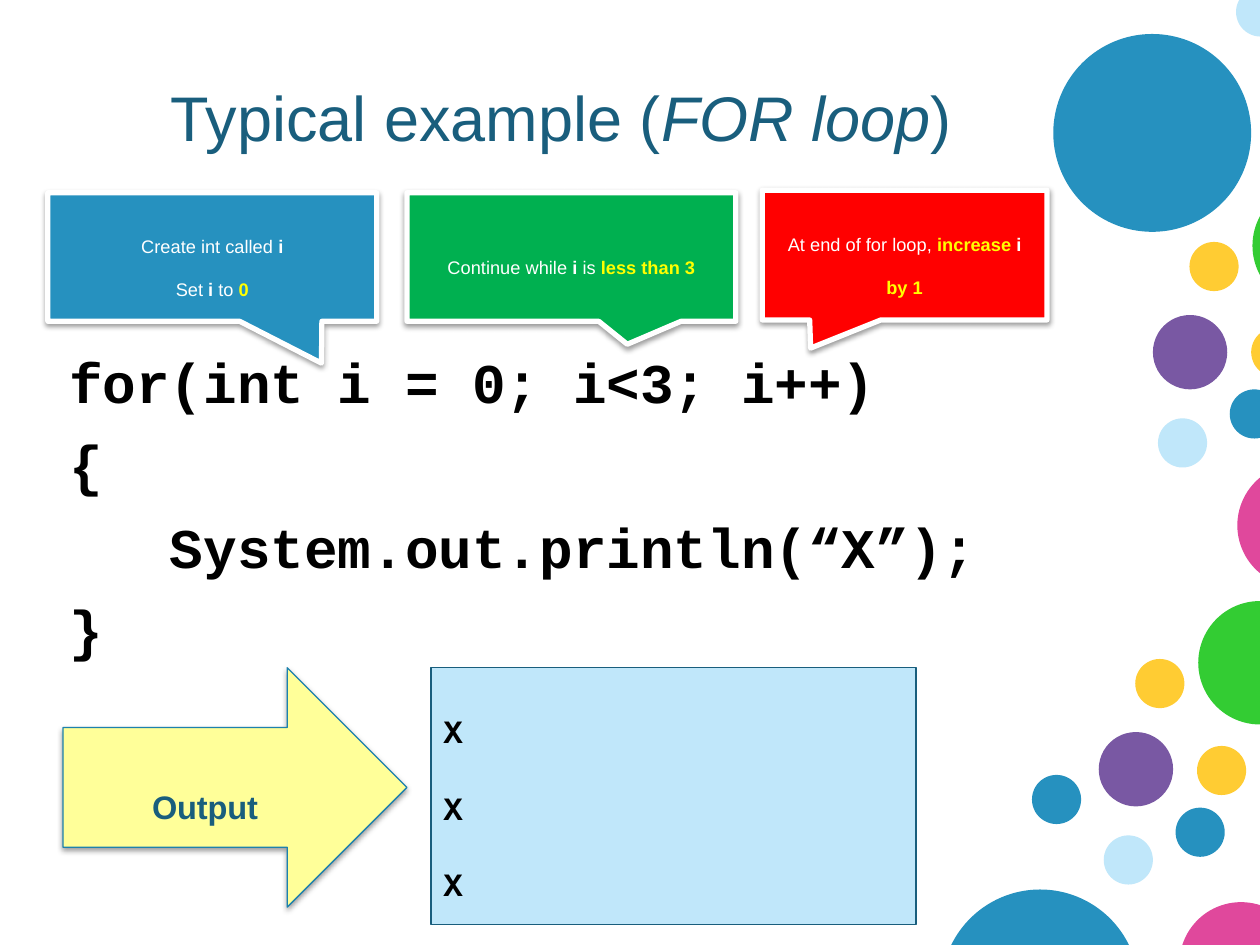
from lxml import etree
from pptx import Presentation
from pptx import util as u
from pptx.dml.color import RGBColor
from pptx.enum import shapes, text
from pptx.oxml.ns import qn

COLOURS = {
    "blue": "2691BF", "sky": "C0E7FA", "green": "33CC33", "yellow": "FFCC33",
    "pink": "E0489C", "purple": "7958A3", "navy": "195E7D", "edge": "1D81AD",
    "lemon": "FFFF99", "leaf": "00B050", "red": "FF0000", "bright": "FFFF00",
    "white": "FFFFFF", "black": "000000",
}
CIRCLES = [
    (9.51, 4.77, 0.98, "green"), (9.01, 5.23, 0.39, "yellow"),
    (9.82, 3.68, 0.98, "pink"), (8.72, 5.81, 0.59, "purple"),
    (8.19, 6.15, 0.39, "blue"), (9.5, 5.92, 0.39, "yellow"),
    (8.76, 6.63, 0.39, "sky"), (9.33, 6.41, 0.39, "blue"),
    (8.36, 0.27, 1.57, "blue"), (9.94, 1.46, 0.98, "green"),
    (9.44, 1.92, 0.39, "yellow"), (9.15, 2.5, 0.59, "purple"),
    (9.93, 2.6, 0.39, "yellow"), (9.19, 3.32, 0.39, "sky"),
    (9.76, 3.09, 0.39, "blue"), (7.47, 7.06, 1.57, "blue"),
    (9.36, 7.16, 0.98, "pink"), (9.81, -0.1, 0.39, "sky"),
]
STRONG = {"bold": True}
KEY = {"bold": True, "colour": "bright"}
CALLOUTS = [
    ((0.38, 1.53, 2.61, 1.02), (0.332, 0.826), "blue",
     [[("Create int called ", {}), ("i", STRONG)],
      [("Set ", {}), ("i ", STRONG), ("to ", {}), ("0", KEY)]]),
    ((3.23, 1.53, 2.61, 1.02), (0.17, 0.679), "leaf",
     [[("Continue while ", {}), ("i", STRONG), (" is ", {}), ("less than 3", KEY)]]),
    ((6.05, 1.51, 2.26, 1.03), (-0.33, 0.717), "red",
     [[("At end of for loop, ", {}), ("increase", KEY), (" i ", STRONG), ("by 1", KEY)]]),
]
CODE = [("for(int i = 0; i<3; i++)", 0), ("{", 0), ("System.out.println(“X”);", 0.8), ("}", 0)]


def rgb(name):
    """Return the named colour."""
    return RGBColor.from_string(COLOURS[name])


def add_span(para, words, size=18, font="Arial", colour="white", bold=False, italic=False, lowered=False):
    """Add a formatted run to a paragraph."""
    span = para.add_run()
    span.text = words
    span.font.size, span.font.name = u.Pt(size), font
    span.font.bold, span.font.italic = bold, italic
    span.font.color.rgb = rgb(colour)
    if lowered:
        span.font._element.set("baseline", "-25000")


class SlideBuilder:
    """Hold the style and the current slide."""

    def __init__(self, deck):
        """Add a title-only slide to the deck."""
        self.page = deck.slides.add_slide(deck.slide_layouts[5])

    def place(self, at):
        """Convert a box in inches to lengths."""
        return [u.Inches(value) for value in at]

    def shape(self, kind, at, fill, line=None, width=0.75, shadow=False):
        """Add a filled preset shape."""
        shape = self.page.shapes.add_shape(kind, *self.place(at))
        shape.shadow.inherit = False
        shape.fill.solid()
        shape.fill.fore_color.rgb = rgb(fill)
        if line:
            shape.line.color.rgb = rgb(line)
            shape.line.width = u.Pt(width)
        else:
            shape.line.fill.background()
        if shadow:
            effects = shape._element.spPr.find(qn("a:effectLst"))
            outer = etree.SubElement(effects, qn("a:outerShdw"), blurRad=str(u.Pt(3.1)),
                                     dist=str(u.Pt(1.6)), dir="5400000", rotWithShape="0")
            tint = etree.SubElement(outer, qn("a:srgbClr"), val=COLOURS["black"])
            etree.SubElement(tint, qn("a:alpha"), val="38000")
        return shape

    def fill_text(self, shape, lines, align=text.PP_ALIGN.CENTER, anchor=text.MSO_ANCHOR.MIDDLE,
                  before=0, **style):
        """Fill a shape with lines of formatted spans."""
        frame = shape.text_frame
        frame.word_wrap = True
        frame.vertical_anchor = anchor
        for index, spans in enumerate(lines):
            para = frame.add_paragraph() if index else frame.paragraphs[0]
            para.alignment = align
            para.space_before = u.Pt(before)
            for words, changes in spans:
                add_span(para, words, **{**style, **changes})
        return frame

    def title(self, at, spans):
        """Place and fill the title."""
        title = self.page.shapes.title
        title.left, title.top, title.width, title.height = self.place(at)
        self.fill_text(title, [spans], size=36, colour="navy")

    def code(self, at, lines):
        """Add a block of indented code."""
        box = self.page.shapes.add_textbox(*self.place(at))
        frame = self.fill_text(box, [[(words, {})] for words, _ in lines], text.PP_ALIGN.LEFT,
                               text.MSO_ANCHOR.TOP, before=8.6, size=32,
                               font="Courier New", colour="black", bold=True)
        for para, (_, indent) in zip(frame.paragraphs, lines):
            para._p.get_or_add_pPr().set("marL", str(u.Inches(indent)))

    def callout(self, at, tip, fill, lines):
        """Add a callout whose tip is given relative to its centre."""
        shape = self.shape(shapes.MSO_SHAPE.RECTANGULAR_CALLOUT, at, fill, "white", 3, True)
        shape.adjustments[0], shape.adjustments[1] = tip
        self.fill_text(shape, lines, lowered=True)


def main():
    """Build and save the slide."""
    deck = Presentation()
    deck.slide_width, deck.slide_height = u.Inches(10), u.Inches(7.5)
    builder = SlideBuilder(deck)
    for left, top, size, colour in CIRCLES:
        builder.shape(shapes.MSO_SHAPE.OVAL, (left, top, size, size), colour)
    builder.title((0.5, 0.3, 7.91, 1.25),
                  [("Typical example (", {}), ("FOR loop", {"italic": True}), (")", {})])
    builder.code((0.45, 2.71, 8.31, 4.15), CODE)
    arrow = builder.shape(shapes.MSO_SHAPE.RIGHT_ARROW, (0.5, 5.3, 2.73, 1.9),
                          "lemon", "edge", shadow=True)
    builder.fill_text(arrow, [[("Output", {})]], size=32, colour="navy", bold=True, lowered=True)
    output = builder.shape(shapes.MSO_SHAPE.RECTANGLE, (3.42, 5.3, 3.85, 2.04), "sky", "navy")
    builder.fill_text(output, [[("X", {})]] * 3, text.PP_ALIGN.LEFT, text.MSO_ANCHOR.TOP,
                      size=32, font="Courier New", colour="black", bold=True, lowered=True)
    for callout in CALLOUTS:
        builder.callout(*callout)
    deck.save("out.pptx")


if __name__ == "__main__":
    main()
